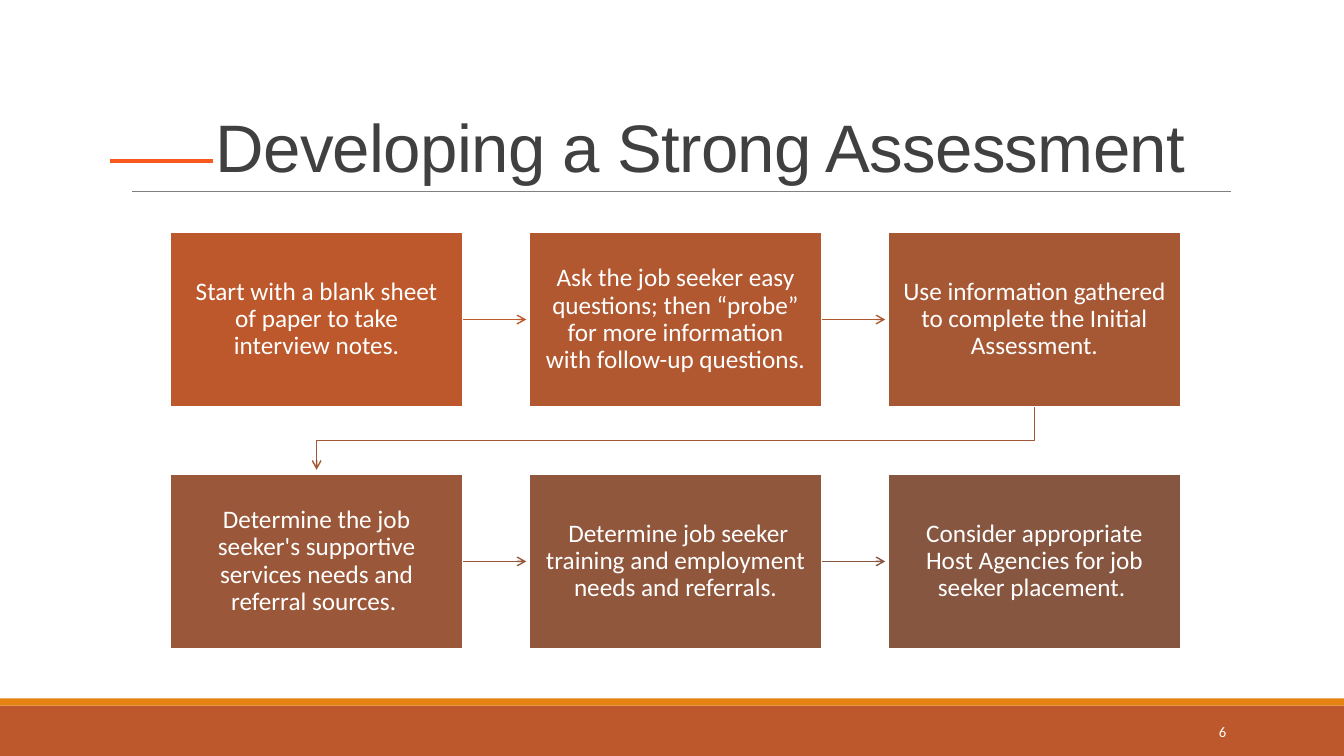
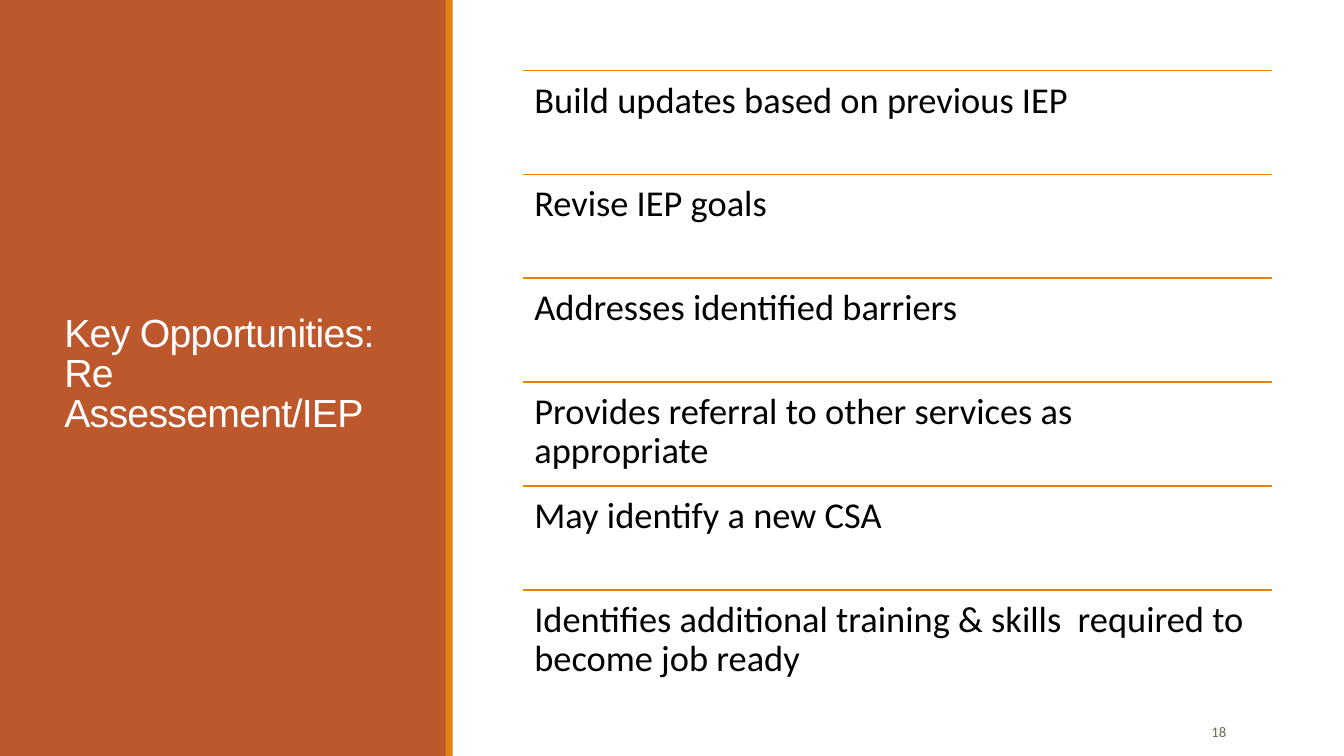
from lxml import etree
from pptx import Presentation
from pptx import util as u
from pptx.dml.color import RGBColor
from pptx.enum import shapes, text
from pptx.oxml import ns

COLORS = {
    "rust": "BD582C", "amber": "E48312", "dash": "F75A1C", "rule": "808080",
    "title": "404040", "white": "FFFFFF", "black": "000000", "number": "637052",
}
STEPS = [
    ("Start with a blank sheet of paper to take interview notes.", "BD582C", "BD582C"),
    ("Ask the job seeker easy questions; then “probe” for more information "
     "with follow-up questions.", "B15831", "AE5832"),
    ("Use information gathered to complete the Initial Assessment.", "A65835", "A05837"),
    ("Determine the job seeker's supportive services needs and referral sources. ",
     "9B5739", "93573C"),
    (" Determine job seeker training and employment needs and referrals.",
     "90573D", "865640"),
    ("Consider appropriate Host Agencies for job seeker placement. ", "865640", None),
]
OPPORTUNITIES = [
    "Build updates based on previous IEP",
    "Revise IEP goals",
    "Addresses identified barriers",
    "Provides referral to other services as  appropriate",
    "May identify a new CSA ",
    "Identifies additional training & skills  required to become job ready",
]


class Deck:
    """Holds the shared style and the current slide."""

    def __init__(self):
        self.presentation = Presentation()
        self.presentation.slide_width = u.Inches(13.33)
        self.presentation.slide_height = u.Inches(7.5)
        self.slide = None

    def new_slide(self):
        self.slide = self.presentation.slides.add_slide(self.presentation.slide_layouts[6])

    def color(self, name):
        return RGBColor.from_string(COLORS.get(name, name))

    def box(self, left, top, width, height, fill, border=None):
        shape = self.slide.shapes.add_shape(
            shapes.MSO_SHAPE.RECTANGLE, *map(u.Inches, (left, top, width, height)))
        shape.shadow.inherit = False
        shape.fill.solid()
        shape.fill.fore_color.rgb = self.color(fill)
        if border:
            shape.line.color.rgb = self.color(border)
            shape.line.width = u.Pt(1.25)
        else:
            shape.line.fill.background()
        return shape

    def bottom_band(self):
        self.box(0, 7, 13.33, 0.5, "rust")
        self.box(0, 6.93, 13.33, 0.07, "amber")

    def side_band(self):
        self.box(0, 0, 4.43, 7.5, "rust")
        self.box(4.42, 0, 0.07, 7.5, "amber")

    def add_words(self, shape, words, size, color, font="Calibri", align="LEFT",
                  anchor="MIDDLE", spacing=0.9, insets=(0.1, 0.05), tracking=None):
        frame = shape.text_frame
        frame.word_wrap = True
        frame.vertical_anchor = text.MSO_ANCHOR[anchor]
        frame.margin_left = frame.margin_right = u.Inches(insets[0])
        frame.margin_top = frame.margin_bottom = u.Inches(insets[1])
        paragraph = frame.paragraphs[0]
        paragraph.alignment = text.PP_ALIGN[align]
        paragraph.line_spacing = spacing
        run = paragraph.add_run()
        run.text = words
        run.font.name = font
        run.font.size = u.Pt(size)
        run.font.color.rgb = self.color(color)
        if tracking:
            run._r.get_or_add_rPr().set("spc", str(tracking))

    def label(self, left, top, width, height, words, size, color, **style):
        shape = self.slide.shapes.add_textbox(*map(u.Inches, (left, top, width, height)))
        self.add_words(shape, words, size, color, **style)

    def title(self, left, top, width, height, words, size, color, anchor):
        self.label(left, top, width, height, words, size, color, font="Arial",
                   anchor=anchor, spacing=0.85, tracking=-50)

    def page_number(self, number, color):
        self.label(10.83, 7.06, 1.43, 0.4, number, 10.5, color, align="RIGHT", spacing=1.0)

    def stroke(self, shape, color, width, arrow=False):
        shape.line.color.rgb = self.color(color)
        shape.line.width = u.Pt(width)
        if arrow:
            outline = shape._element.spPr.find(ns.qn("a:ln"))
            etree.SubElement(outline, ns.qn("a:tailEnd")).set("type", "arrow")

    def line(self, start, end, color, width, arrow=False, source=None):
        connector = self.slide.shapes.add_connector(
            shapes.MSO_CONNECTOR.STRAIGHT, *map(u.Inches, start + end))
        if source is not None:
            connector.begin_connect(source, 3)
        self.stroke(connector, color, width, arrow)
        etree.SubElement(connector._element.spPr, ns.qn("a:effectLst"))

    def bent_arrow(self, points, color):
        corners = [tuple(map(u.Inches, point)) for point in points]
        builder = self.slide.shapes.build_freeform(*corners[0])
        builder.add_line_segments(corners[1:], close=False)
        shape = builder.convert_to_shape()
        shape.shadow.inherit = False
        shape.fill.background()
        self.stroke(shape, color, 1, arrow=True)


def assessment_slide(deck):
    deck.new_slide()
    deck.bottom_band()
    deck.line((1.31, 1.9), (12.21, 1.9), "rule", 0.5)
    deck.line((1.09, 1.6), (2.11, 1.6), "dash", 3)
    deck.title(2.04, 0.31, 10.16, 1.59, "Developing a Strong Assessment", 48, "title", "BOTTOM")
    deck.page_number("6", "white")
    width, height, columns = 2.9, 1.74, 3
    left, top, column_step, row_step = 1.69, 2.3, 3.56, 2.4
    for index, (words, fill, arrow) in enumerate(STEPS):
        row, column = divmod(index, columns)
        x, y = left + column * column_step, top + row * row_step
        step = deck.box(x, y, width, height, fill, "white")
        deck.add_words(step, words, 18, "white", align="CENTER", insets=(0.14, 0.15))
        if arrow is None:
            continue
        if column < columns - 1:
            middle = y + height / 2
            deck.line((x + width, middle), (x + column_step - 0.03, middle),
                      arrow, 1, arrow=True, source=step)
        else:
            start, end = x + width / 2, left + width / 2
            bottom, next_top = y + height, y + row_step
            turn = (bottom + next_top) / 2
            deck.bent_arrow([(start, bottom), (start, turn), (end, turn),
                             (end, next_top - 0.04)], arrow)


def opportunities_slide(deck):
    deck.new_slide()
    deck.side_band()
    deck.title(0.54, 0.57, 3.37, 6.31, "Key Opportunities: Re Assessement/IEP",
               28, "white", "MIDDLE")
    deck.page_number("18", "number")
    left, top, width, height = 5.19, 0.7, 7.43, 1.03
    for index, words in enumerate(OPPORTUNITIES):
        y = top + index * height
        deck.line((left, y), (left + width, y), "amber", 1.25)
        deck.label(left, y, width, height, words, 26, "black",
                   anchor="TOP", insets=(0.11, 0.11))


def main():
    deck = Deck()
    assessment_slide(deck)
    opportunities_slide(deck)
    deck.presentation.save("out.pptx")


if __name__ == "__main__":
    main()
